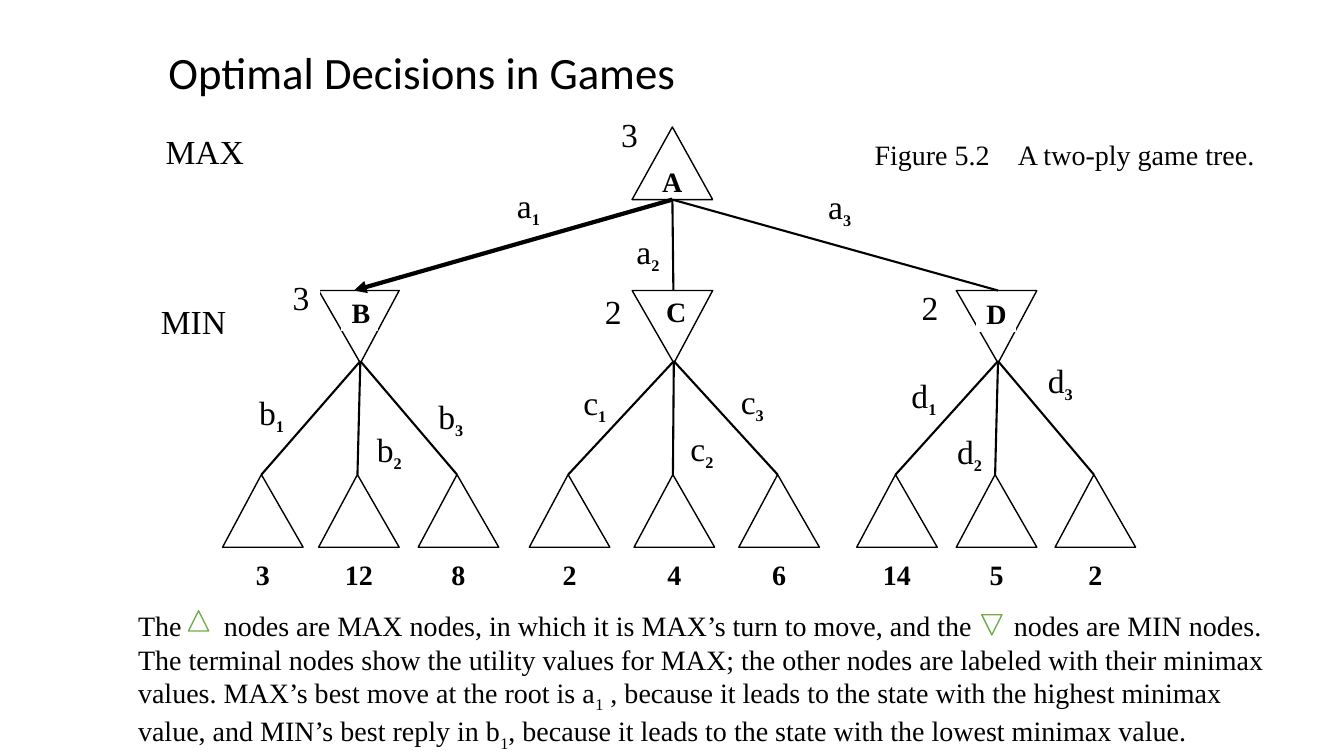
from pptx import Presentation
from pptx.dml.color import RGBColor
from pptx.enum.shapes import MSO_CONNECTOR as LINK, MSO_SHAPE as SHAPE
from pptx.enum.text import MSO_ANCHOR as ANCHOR, MSO_AUTO_SIZE as FIT, PP_ALIGN as ALIGN
from pptx.oxml.ns import qn
from pptx.util import Cm, Pt
from lxml.etree import SubElement

SERIF = "Times New Roman"
BLACK, WHITE, GREEN = "000000", "FFFFFF", "70AD47"
LEFT, MID, RIGHT = ALIGN.LEFT, ALIGN.CENTER, ALIGN.RIGHT

TITLE = "Optimal Decisions in Games"
CAPTION = "Figure 5.2\tA two-ply game tree."
# text, subscript or not
NOTE = [
    ("The\tnodes are MAX nodes, in which it is MAX’s turn to move, and the\t"
     "nodes are MIN nodes. The terminal nodes show the utility values for MAX; "
     "the other nodes are labeled with their minimax values. "
     "MAX’s best move at the root is a", False),
    ("1", True),
    (" , because it leads to the state with the highest minimax value, "
     "and MIN’s best reply in b", False),
    ("1", True),
    (", because it leads to the state with the lowest minimax value.", False),
]

# All lengths in cm
WIDE, HIGH, SKEW = 2.03, 1.83, 0.482
ROOT = (15.93, 3.2)
MIN_TOP, LEAF_TOP = 7.32, 11.96
# MIN node: left edge, end of the move from the root, leaves as (left edge, value)
TREE = [
    (8.03, 8.92, [(5.61, "3"), (8.03, "12"), (10.54, "8")]),
    (15.93, 16.97, [(13.34, "2"), (15.98, "4"), (18.62, "6")]),
    (24.1, 25.15, [(21.59, "14"), (24.1, "5"), (26.59, "2")]),
]
# name, box
NAMES = [
    ("B", (8.61, 7.39, 0.89, 0.94)),
    ("C", (16.54, 7.49, 0.76, 0.71)),
    ("D", (24.61, 7.42, 0.97, 0.94)),
]
# letter, subscript, alignment, box
MOVES = [
    ("a", "1", RIGHT, (12.34, 4.67, 1.52, 1.09)),
    ("a", "2", RIGHT, (15.37, 5.79, 1.5, 1.14)),
    ("a", "3", LEFT, (20.62, 4.55, 1.52, 1.37)),
    ("b", "1", RIGHT, (6.17, 10.01, 1.24, 0.84)),
    ("b", "2", LEFT, (9.25, 10.95, 1.24, 0.81)),
    ("b", "3", LEFT, (10.8, 10.13, 1.24, 0.81)),
    ("c", "1", LEFT, (14.45, 9.73, 1.24, 0.91)),
    ("c", "2", LEFT, (17.15, 10.87, 1.24, 0.91)),
    ("c", "3", LEFT, (18.42, 9.7, 1.24, 0.89)),
    ("d", "1", MID, (22.61, 9.55, 1.35, 0.91)),
    ("d", "2", RIGHT, (23.65, 10.85, 1.35, 1.14)),
    ("d", "3", LEFT, (26.16, 9.12, 1.52, 0.99)),
]
# minimax values and player names
SIDES = [
    ("3", (15.09, 2.97, 1.24, 0.84)),
    ("3", (6.81, 7.06, 1.24, 0.84)),
    ("2", (14.68, 7.42, 1.24, 0.84)),
    ("2", (22.66, 7.32, 1.24, 0.84)),
    ("MAX", (3.68, 3.4, 2.72, 0.79)),
    ("MIN", (3.23, 7.7, 2.72, 0.79)),
]


def color(code):
    return RGBColor.from_string(code)


def put(para, text, size=20, bold=False, sub=False, face=SERIF):
    run = para.add_run()
    run.text = text
    font = run.font
    font.name, font.size, font.bold = face, Pt(size), bold
    font.color.rgb = color(BLACK)
    if sub:
        font._element.set("baseline", "-25000")


def draw(slide, kind, box, line=BLACK):
    """Add a white shape with a thin outline."""
    shape = slide.shapes.add_shape(kind, *map(Cm, box))
    shape.shadow.inherit = False
    shape.fill.solid()
    shape.fill.fore_color.rgb = color(WHITE)
    shape.line.color.rgb = color(line)
    shape.line.width = Pt(1)
    shape.text_frame.vertical_anchor = ANCHOR.MIDDLE
    return shape


def label(slide, box, align):
    """Add a white patch and return its paragraph."""
    para = draw(slide, SHAPE.RECTANGLE, box, WHITE).text_frame.paragraphs[0]
    para.alignment = align
    return para


def link(slide, start, end, width=1.5, arrow=False):
    line = slide.shapes.add_connector(LINK.STRAIGHT, *map(Cm, start + end))
    line.line.color.rgb = color(BLACK)
    line.line.width = Pt(width)
    if arrow:
        SubElement(line.line._get_or_add_ln(), qn("a:tailEnd"), type="triangle")
    SubElement(line._element.spPr, qn("a:effectLst"))


def write(slide, box, stops, kind="l"):
    """Add a text box with tab stops and return its paragraph."""
    frame = slide.shapes.add_textbox(*map(Cm, box)).text_frame
    frame.word_wrap = True
    frame.auto_size = FIT.SHAPE_TO_FIT_TEXT
    para = frame.paragraphs[0]
    tabs = SubElement(para._p.get_or_add_pPr(), qn("a:tabLst"))
    for stop in stops:
        SubElement(tabs, qn("a:tab"), pos=str(Cm(stop)), algn=kind)
    return para


def add_title(slide):
    title = slide.shapes.title
    title.left, title.top, title.width, title.height = map(Cm, (3.99, 0.99, 16.64, 1.63))
    frame = title.text_frame
    frame.auto_size = FIT.NONE
    frame.vertical_anchor = ANCHOR.TOP
    para = frame.paragraphs[0]
    para.alignment = LEFT
    put(para, TITLE, 32, face="Calibri")


def add_nodes(slide):
    root = draw(slide, SHAPE.ISOSCELES_TRIANGLE, (*ROOT, WIDE, HIGH))
    para = root.text_frame.paragraphs[0]
    para.alignment = MID
    put(para, "A", bold=True)
    for left, _, leaves in TREE:
        spots = [(left, MIN_TOP, 180)] + [(x, LEAF_TOP, 0) for x, _ in leaves]
        for x, top, turn in spots:
            node = draw(slide, SHAPE.ISOSCELES_TRIANGLE, (x, top, WIDE, HIGH))
            node.adjustments[0] = SKEW
            node.rotation = turn


def add_labels(slide):
    for name, box in NAMES:
        put(label(slide, box, MID), name, bold=True)
    for letter, sub, align, box in MOVES:
        para = label(slide, box, align)
        put(para, letter, 24)
        put(para, sub, bold=True, sub=True)
    for text, box in SIDES:
        put(label(slide, box, RIGHT), text, 24)


def add_links(slide):
    base = (ROOT[0] + WIDE / 2, ROOT[1] + HIGH)
    for num, (left, end, leaves) in enumerate(TREE):
        best = num == 0
        link(slide, base, (end, MIN_TOP), 3 if best else 1.5, best)
        tip = (left + WIDE * (1 - SKEW), MIN_TOP + HIGH - 0.05)
        for x, _ in leaves:
            link(slide, tip, (x + WIDE * SKEW, LEAF_TOP))


def add_texts(slide):
    leaves = [leaf for _, _, group in TREE for leaf in group]
    edge, pad = leaves[0][0], 0.25
    stops = [x + WIDE / 2 - edge - pad for x, _ in leaves]
    para = write(slide, (edge, 13.92, 23.32, 1.12), stops, "ctr")
    for _, value in leaves:
        put(para, "\t" + value, bold=True)

    para = write(slide, (3.23, 15.21, 29.18, 3.68), (2.16, 22.07))
    for text, sub in NOTE:
        put(para, text, sub=sub)
    for x, top, turn in ((4.75, 15.39, 0), (24.74, 15.49, 180)):
        mark = draw(slide, SHAPE.ISOSCELES_TRIANGLE, (x, top, 0.51, 0.51), GREEN)
        mark.rotation = turn

    put(write(slide, (21.79, 3.35, 10.24, 1.12), (3.61,)), CAPTION)


def main():
    deck = Presentation()
    deck.slide_width, deck.slide_height = Cm(33.87), Cm(19.05)
    slide = deck.slides.add_slide(deck.slide_layouts[5])
    for step in (add_title, add_nodes, add_labels, add_links, add_texts):
        step(slide)
    deck.save("out.pptx")


if __name__ == "__main__":
    main()
